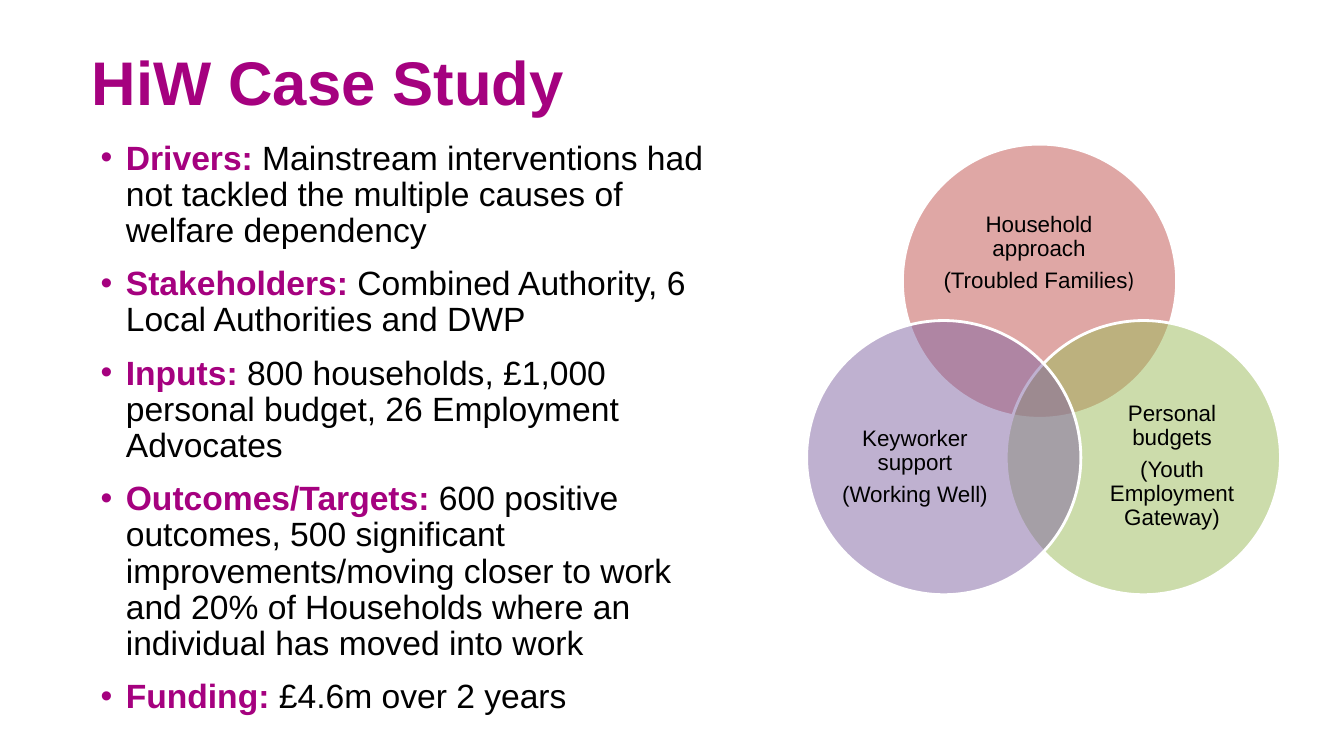
from lxml.etree import SubElement
from pptx import Presentation
from pptx.dml.color import RGBColor
from pptx.enum.shapes import MSO_SHAPE as Shape
from pptx.enum.text import MSO_ANCHOR as Anchor, PP_ALIGN as Align
from pptx.oxml.ns import qn
from pptx.util import Inches, Pt

MAGENTA, BLACK, WHITE = "A5017F", "000000", "FFFFFF"
LINE_SPACING = 0.9
CIRCLE_SIZE = 2.72

FACTS = [
    ("Drivers:", "Mainstream interventions had not tackled the multiple causes "
                 "of welfare dependency"),
    ("Stakeholders:", "Combined Authority, 6 Local Authorities and DWP"),
    ("Inputs:", "800 households, £1,000 personal budget, 26 Employment Advocates"),
    ("Outcomes/Targets:", "600 positive outcomes, 500 significant "
                          "improvements/moving closer to work and 20% of Households "
                          "where an individual has moved into work"),
    ("Funding:", "£4.6m over 2 years"),
]

# Circle offset in the diagram, colour, label box within the circle, label lines
APPROACHES = [
    ((0.95, 0), "C0504D", (0.36, 0.47, 1.99, 1.22),
     [[("Household approach", "Arial")],
      [("(Troubled Families", "Arial"), (")", "Calibri")]]),
    ((1.98, 1.75), "9BBB59", (0.83, 0.7, 1.63, 1.49),
     [[("Personal budgets", "Arial")], [("(Youth Employment Gateway)", "Arial")]]),
    ((0, 1.75), "8064A2", (0.26, 0.71, 1.63, 1.49),
     [[("Keyworker support", "Arial")], [("(Working Well)", "Arial")]]),
]


def colour(value):
    return RGBColor.from_string(value)


def add_run(paragraph, text, size, value=BLACK, bold=False, face="Arial"):
    run = paragraph.add_run()
    run.text = text
    for key, setting in {"name": face, "size": Pt(size), "bold": bold}.items():
        setattr(run.font, key, setting)
    run.font.color.rgb = colour(value)


def add_paragraph(frame, index, **formats):
    paragraph = frame.add_paragraph() if index else frame.paragraphs[0]
    for key, setting in {"line_spacing": LINE_SPACING, **formats}.items():
        setattr(paragraph, key, setting)
    return paragraph


def add_text_frame(slide, box, **formats):
    frame = slide.shapes.add_textbox(*map(Inches, box)).text_frame
    for key, setting in {"word_wrap": True, **formats}.items():
        setattr(frame, key, setting)
    return frame


def add_bullet(paragraph, value, indent=0.25):
    properties = paragraph._p.get_or_add_pPr()
    properties.set("marL", str(Inches(indent)))
    properties.set("indent", str(-Inches(indent)))
    bullet_colour = SubElement(properties, qn("a:buClr"))
    SubElement(bullet_colour, qn("a:srgbClr"), val=value)
    SubElement(properties, qn("a:buFont"), typeface="Arial")
    SubElement(properties, qn("a:buChar"), char="•")


def place_heading(slide, box):
    heading = slide.shapes.title
    for side, length in zip(("left", "top", "width", "height"), box):
        setattr(heading, side, Inches(length))
    heading.text_frame.word_wrap = True
    heading.text_frame.vertical_anchor = Anchor.MIDDLE
    paragraph = add_paragraph(heading.text_frame, 0, alignment=Align.LEFT)
    add_run(paragraph, "HiW Case Study", 44, MAGENTA, True)


def place_facts(slide, box):
    frame = add_text_frame(slide, box)
    for index, (topic, detail) in enumerate(FACTS):
        paragraph = add_paragraph(frame, index, space_before=Pt(6 if index else 0),
                                  space_after=Pt(6))
        add_bullet(paragraph, MAGENTA)
        add_run(paragraph, topic + " ", 24, MAGENTA, True)
        add_run(paragraph, detail, 24)


def add_circle(slide, left, top, fill):
    circle = slide.shapes.add_shape(
        Shape.OVAL, *map(Inches, (left, top, CIRCLE_SIZE, CIRCLE_SIZE)))
    circle.shadow.inherit = False
    circle.fill.solid()
    circle.fill.fore_color.rgb = colour(fill)
    # Half transparent, so the overlaps show
    fill_colour = circle._element.spPr.find(qn("a:solidFill")).find(qn("a:srgbClr"))
    SubElement(fill_colour, qn("a:alpha"), val="50000")
    circle.line.color.rgb = colour(WHITE)
    circle.line.width = Pt(2)


def place_venn(slide, left, top):
    for (across, down), fill, (x, y, width, height), lines in APPROACHES:
        circle_left, circle_top = left + across, top + down
        add_circle(slide, circle_left, circle_top, fill)
        label = add_text_frame(
            slide, (circle_left + x, circle_top + y, width, height),
            vertical_anchor=Anchor.MIDDLE, margin_left=0, margin_right=0,
            margin_top=0, margin_bottom=0)
        for index, runs in enumerate(lines):
            paragraph = add_paragraph(label, index, alignment=Align.CENTER,
                                      space_after=Pt(5.6))
            for text, face in runs:
                add_run(paragraph, text, 16, face=face)


def main():
    deck = Presentation()
    deck.slide_width, deck.slide_height = Inches(13.33), Inches(7.5)
    slide = deck.slides.add_slide(deck.slide_layouts[5])
    place_heading(slide, (0.81, 0.12, 11.61, 1.45))
    place_facts(slide, (0.9, 1.35, 6.38, 5.9))
    place_venn(slide, 8, 1.43)
    deck.save("out.pptx")


if __name__ == "__main__":
    main()
